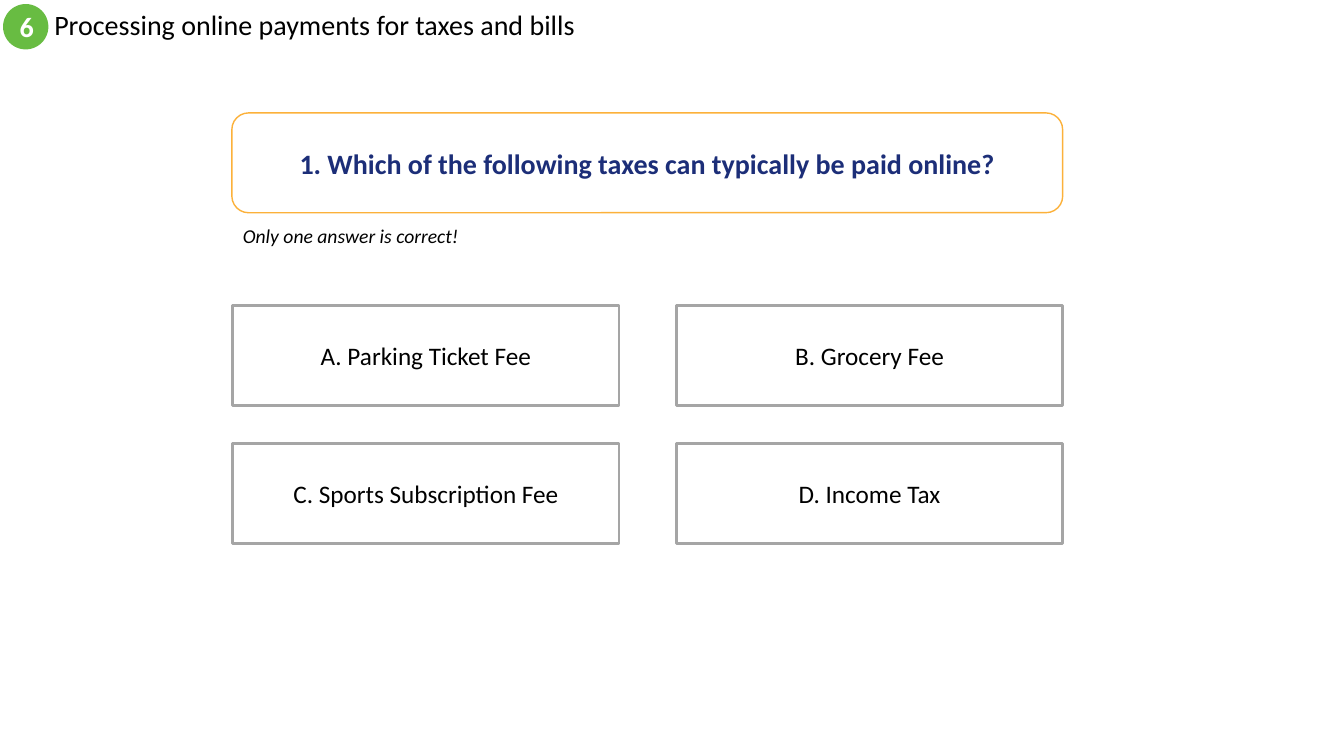
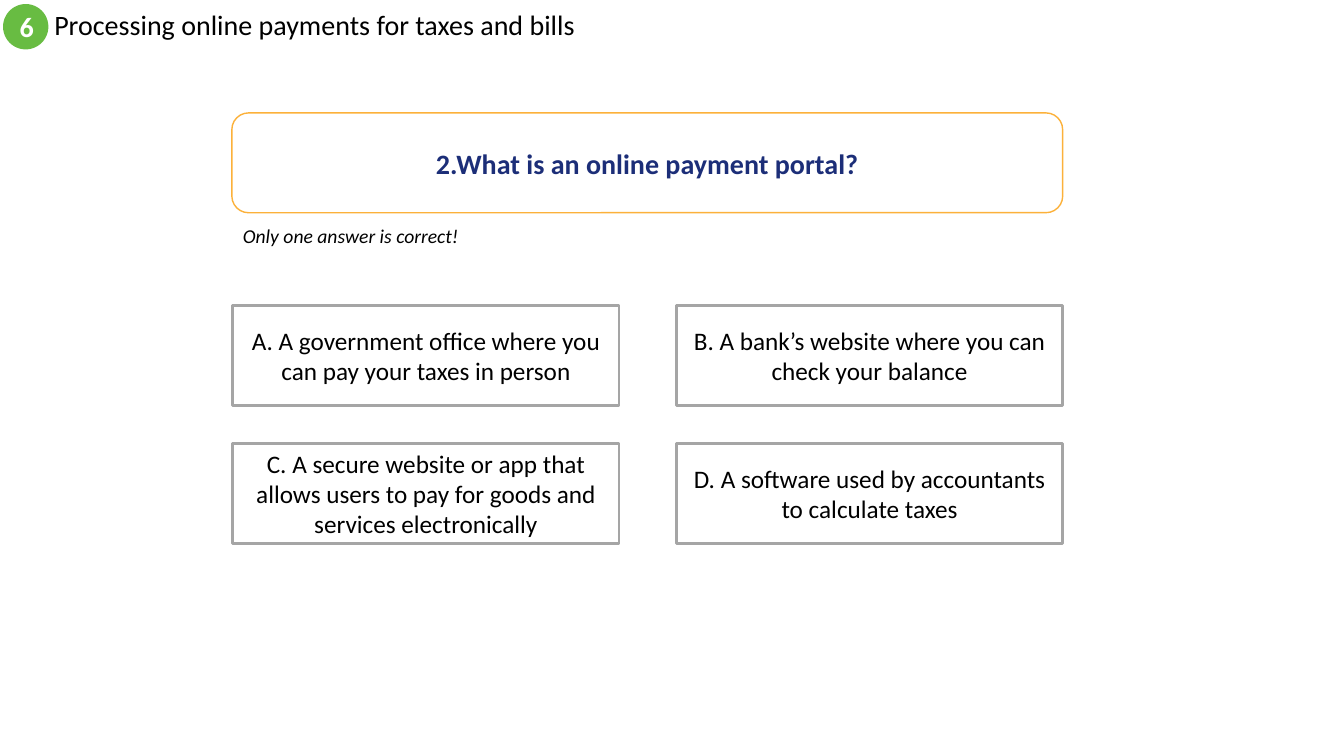
from dataclasses import dataclass

from pptx import Presentation
from pptx.dml.color import RGBColor
from pptx.enum.shapes import MSO_SHAPE
from pptx.enum.text import MSO_ANCHOR, PP_ALIGN
from pptx.shapes.autoshape import Shape
from pptx.slide import Slide
from pptx.util import Inches, Pt

FONT = "Calibri"
BLACK, WHITE, NAVY = "000000", "FFFFFF", "1C2E78"
GREEN, ORANGE, GRAY = "68BC42", "FCB13A", "A5A5A5"

CHAPTER = "6"
TITLE = "Processing online payments for taxes and bills"
HINT = "Only one answer is correct!"

ANSWER_LEFT, ANSWER_TOP = 2.31, 3.03
ANSWER_W, ANSWER_H = 3.83, 0.99
COL_STEP, ROW_STEP = 4.4, 1.37


@dataclass(frozen=True)
class Box:
    left: float
    top: float
    width: float
    height: float

    def emu(self) -> tuple[int, ...]:
        return tuple(Inches(v) for v in (self.left, self.top, self.width, self.height))


@dataclass(frozen=True)
class Style:
    size: int
    color: str = BLACK
    bold: bool = False
    italic: bool = False
    align: PP_ALIGN = PP_ALIGN.CENTER
    anchor: MSO_ANCHOR = MSO_ANCHOR.MIDDLE
    spacing: float = 1.0


@dataclass(frozen=True)
class Question:
    text: str
    answers: tuple[str, ...]


TITLE_STYLE = Style(20, align=PP_ALIGN.LEFT, spacing=0.9)
BADGE_STYLE = Style(20, WHITE, bold=True)
QUESTION_STYLE = Style(20, NAVY, bold=True)
HINT_STYLE = Style(14, italic=True, align=PP_ALIGN.LEFT, anchor=MSO_ANCHOR.TOP)
ANSWER_STYLE = Style(18)

QUESTIONS = (
    Question(
        "1. Which of the following taxes can typically be paid online?",
        (
            "A. Parking Ticket Fee",
            "B. Grocery Fee",
            "C. Sports Subscription Fee",
            "D. Income Tax",
        ),
    ),
    Question(
        "2.What is an online payment portal?",
        (
            "A. A government office where you can pay your taxes in person",
            "B. A bank’s website where you can check your balance",
            "C. A secure website or app that allows users to pay for goods "
            "and services electronically",
            "D. A software used by accountants to calculate taxes",
        ),
    ),
)


def rgb(color: str) -> RGBColor:
    return RGBColor.from_string(color)


def write(sp: Shape, text: str, style: Style) -> None:
    tf = sp.text_frame
    tf.word_wrap = True
    tf.vertical_anchor = style.anchor
    p = tf.paragraphs[0]
    p.alignment = style.align
    p.line_spacing = style.spacing
    r = p.add_run()
    r.text = text
    r.font.name = FONT
    r.font.size = Pt(style.size)
    r.font.bold = style.bold
    r.font.italic = style.italic
    r.font.color.rgb = rgb(style.color)


def add_text(s: Slide, box: Box, text: str, style: Style) -> None:
    write(s.shapes.add_textbox(*box.emu()), text, style)


def add_panel(s: Slide, kind: MSO_SHAPE, box: Box, text: str, style: Style,
              fill: str = WHITE, line: str | None = None, weight: float = 1) -> None:
    """Draw a filled shape with text; it has no outline unless line is given."""
    sp = s.shapes.add_shape(kind, *box.emu())
    sp.shadow.inherit = False
    sp.fill.solid()
    sp.fill.fore_color.rgb = rgb(fill)
    if line:
        sp.line.color.rgb = rgb(line)
        sp.line.width = Pt(weight)
    else:
        sp.line.fill.background()
    write(sp, text, style)


def add_header(s: Slide) -> None:
    add_text(s, Box(0.44, 0.04, 8, 0.45), TITLE, TITLE_STYLE)
    add_panel(s, MSO_SHAPE.OVAL, Box(0.03, 0.04, 0.45, 0.45), CHAPTER, BADGE_STYLE, GREEN)


def add_answers(s: Slide, answers: tuple[str, ...]) -> None:
    """Lay the answers out row by row in two columns."""
    for i, answer in enumerate(answers):
        row, col = divmod(i, 2)
        box = Box(ANSWER_LEFT + col * COL_STEP, ANSWER_TOP + row * ROW_STEP,
                  ANSWER_W, ANSWER_H)
        add_panel(s, MSO_SHAPE.RECTANGLE, box, answer, ANSWER_STYLE, line=GRAY, weight=2)


def add_question_slide(prs: Presentation, question: Question) -> None:
    s = prs.slides.add_slide(prs.slide_layouts[6])
    add_header(s)
    add_panel(s, MSO_SHAPE.ROUNDED_RECTANGLE, Box(2.3, 1.12, 8.24, 0.99),
              question.text, QUESTION_STYLE, line=ORANGE)
    add_text(s, Box(2.31, 2.17, 2.36, 0.34), HINT, HINT_STYLE)
    add_answers(s, question.answers)


def main() -> None:
    prs = Presentation()
    prs.slide_width, prs.slide_height = Inches(13.33), Inches(7.5)
    for question in QUESTIONS:
        add_question_slide(prs, question)
    prs.save("out.pptx")


if __name__ == "__main__":
    main()
